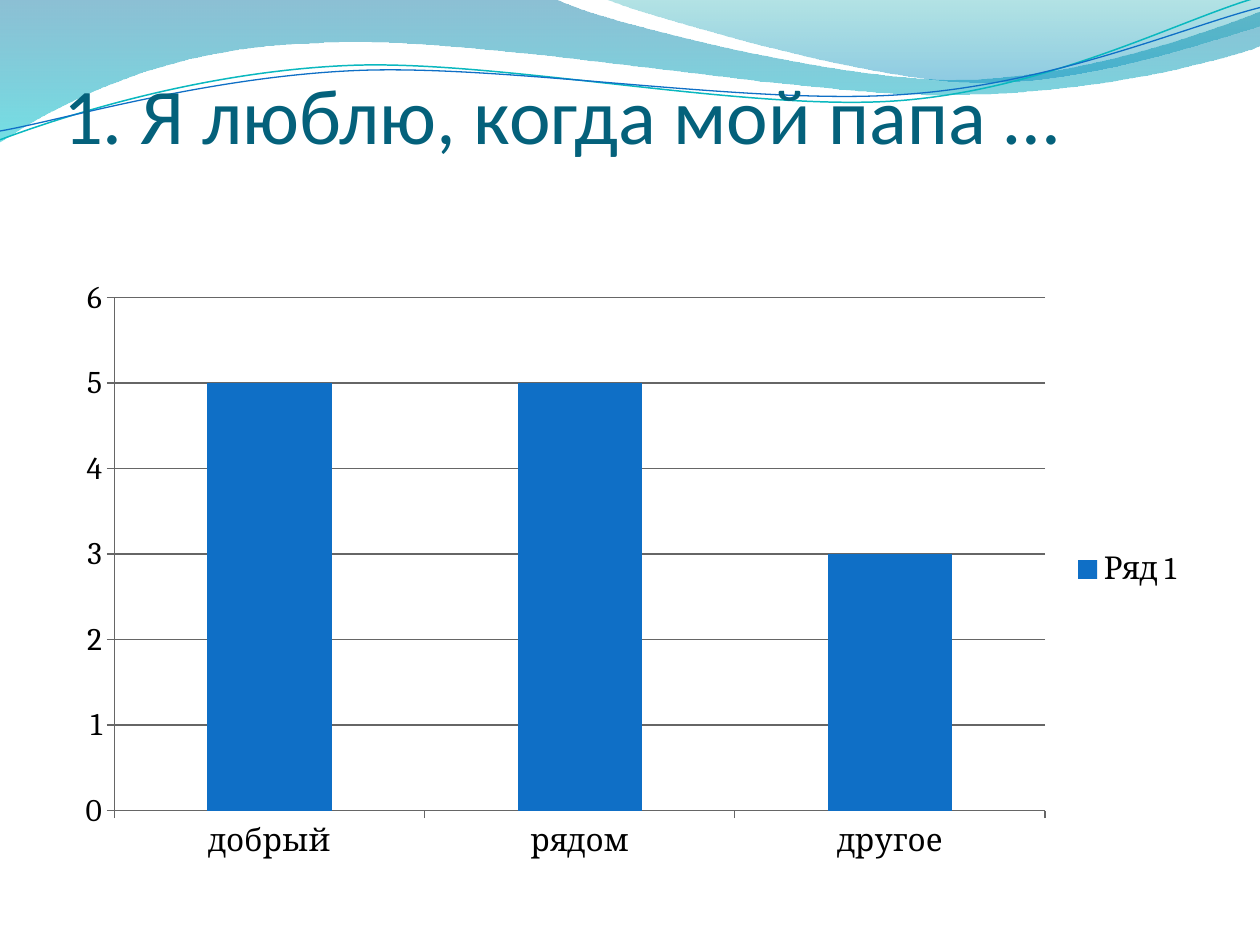
import lxml.etree
import pptx
import pptx.chart.data
import pptx.dml.color
import pptx.enum.chart
import pptx.enum.text
import pptx.oxml.ns
import pptx.util


def colour(code):
    return pptx.dml.color.RGBColor.from_string(code)


def draw_wave(page, unit, start, pieces, closed):
    corners = [(round(piece[-2] * unit), round(piece[-1] * unit)) for piece in pieces]
    builder = page.shapes.build_freeform(round(start[0] * unit), round(start[1] * unit))
    builder.add_line_segments(corners, close=closed)
    wave = builder.convert_to_shape()
    wave.shadow.inherit = False
    segments = wave.element.spPr.findall(".//" + pptx.oxml.ns.qn("a:lnTo"))
    for segment, piece in zip(segments, pieces):
        if len(piece) == 6:
            curve = lxml.etree.Element(pptx.oxml.ns.qn("a:cubicBezTo"))
            for x, y in zip(piece[::2], piece[1::2]):
                point = lxml.etree.SubElement(curve, pptx.oxml.ns.qn("a:pt"))
                point.set("x", str(round(x * unit) - wave.left))
                point.set("y", str(round(y * unit) - wave.top))
            segment.getparent().replace(segment, curve)
    return wave


deck = pptx.Presentation()
deck.slide_width = pptx.util.Inches(10)
deck.slide_height = pptx.util.Inches(7.5)
unit = deck.slide_width // 10
page = deck.slides.add_slide(deck.slide_layouts[5])

bands = [
    ((0, 0), [(4.4, -0.01), (4.76, 0.17, 6.64, 0.63, 7.58, 0.63),
              (8.53, 0.63, 9.58, 0.26, 10, 0.09), (10.01, 0.36),
              (9.83, 0.44, 8.7, 0.76, 7.46, 0.75),
              (6.22, 0.75, 3.82, 0.28, 2.57, 0.34),
              (1.29, 0.36, 0.46, 0.83, -0.01, 1.13), (0, 0)],
     [("0074A1", 45), ("00C6CF", 55)]),
    ((4.79, -0.01), [(5.09, 0.11, 6.82, 0.62, 7.69, 0.65),
                     (8.56, 0.69, 9.61, 0.32, 10, 0.21), (10, 0), (4.79, -0.01)],
     [("00A1A9", 30), ("008BBF", 45)]),
]
for start, pieces, shades in bands:
    band = draw_wave(page, unit, start, pieces, True)
    band.line.fill.background()
    band.fill.gradient()
    band.fill.gradient_angle = 270
    for position, (stop, (code, opacity)) in enumerate(zip(band.fill.gradient_stops, shades)):
        stop.position = position
        stop.color.rgb = colour(code)
    tints = band.element.spPr.findall(".//" + pptx.oxml.ns.qn("a:srgbClr"))
    for tint, (code, opacity) in zip(tints, shades):
        alpha = lxml.etree.SubElement(tint, pptx.oxml.ns.qn("a:alpha"))
        alpha.set("val", str(opacity * 1000))

strands = [
    ((0, 1.11), [(0.48, 0.93, 1.58, 0.57, 2.77, 0.52),
                 (3.95, 0.47, 5.93, 0.89, 7.13, 0.8),
                 (8.33, 0.71, 9.38, 0.15, 9.98, -0.02)], "0AB8BF", 0.85),
    ((0, 1.04), [(0.47, 0.96, 1.64, 0.61, 2.83, 0.56),
                 (4.03, 0.51, 5.97, 0.84, 7.17, 0.75),
                 (8.36, 0.67, 9.41, 0.21, 10, 0.06)], "0F6FC6", 0.75),
]
for start, pieces, code, width in strands:
    strand = draw_wave(page, unit, start, pieces, False)
    strand.fill.background()
    strand.line.color.rgb = colour(code)
    strand.line.width = pptx.util.Pt(width)

title = page.shapes.title
title.element.getparent().append(title.element)
title.left, title.top = round(0.5 * unit), round(0.77 * unit)
title.width, title.height = 9 * unit, round(1.25 * unit)
box = title.text_frame
box.word_wrap = True
box.auto_size = pptx.enum.text.MSO_AUTO_SIZE.NONE
box.vertical_anchor = pptx.enum.text.MSO_ANCHOR.BOTTOM
box.margin_left = box.margin_right = box.margin_bottom = 0
box.margin_top = round(0.05 * unit)
para = box.paragraphs[0]
para.alignment = pptx.enum.text.PP_ALIGN.LEFT
para.font.size = pptx.util.Pt(45)
span = para.add_run()
span.text = "1. Я люблю, когда мой папа …"
span.font.size = pptx.util.Pt(45)
span.font.name = "Calibri"
span.font.color.rgb = colour("04617B")
para.add_line_break()

answers = pptx.chart.data.CategoryChartData()
answers.categories = ["добрый", "рядом", "другое"]
answers.add_series("Ряд 1", [5, 5, 3])
chart = page.shapes.add_chart(
    pptx.enum.chart.XL_CHART_TYPE.COLUMN_CLUSTERED,
    round(0.5 * unit), round(2.12 * unit), 9 * unit, round(4.8 * unit), answers).chart
chart.has_title = False
chart.font.size = pptx.util.Pt(18)
chart.font.name = "Cambria"
chart.font.color.rgb = colour("000000")
chart.has_legend = True
chart.legend.position = pptx.enum.chart.XL_LEGEND_POSITION.RIGHT
chart.legend.include_in_layout = False

plot = chart.plots[0]
plot.gap_width = 150
plot.vary_by_categories = False
bars = plot.series[0].format.fill
bars.solid()
bars.fore_color.rgb = colour("0F6FC6")

scale = chart.value_axis
scale.minimum_scale, scale.maximum_scale, scale.major_unit = 0, 6, 1
scale.has_major_gridlines = True
for ruled in (scale, chart.category_axis, scale.major_gridlines):
    ruled.format.line.color.rgb = colour("666666")
    ruled.format.line.width = pptx.util.Pt(0.75)
for axis in (scale, chart.category_axis):
    axis.major_tick_mark = pptx.enum.chart.XL_TICK_MARK.OUTSIDE

deck.save("out.pptx")
